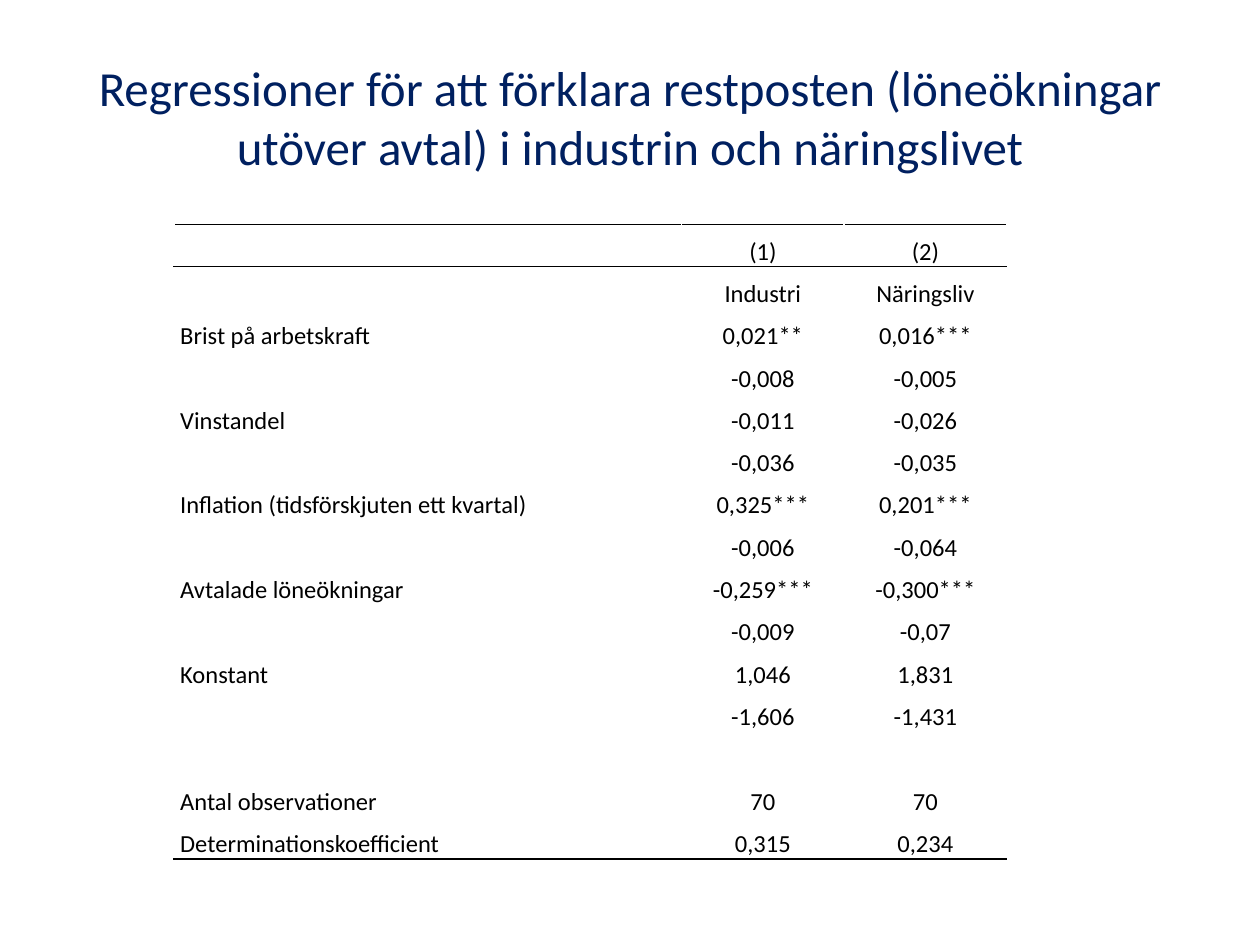
from lxml.etree import SubElement
from pptx import Presentation
from pptx.dml.color import RGBColor
from pptx.enum.text import MSO_ANCHOR as Anchor, PP_ALIGN as Align
from pptx.oxml.ns import qn
from pptx.util import Inches, Pt

TITLE = ("Regressioner för att förklara restposten (löneökningar utöver avtal) "
         "i industrin och näringslivet")
REGRESSIONS = [
    ("", "(1)", "(2)"),
    ("", "Industri", "Näringsliv"),
    ("Brist på arbetskraft", "0,021**", "0,016***"),
    ("", "-0,008", "-0,005"),
    ("Vinstandel", "-0,011", "-0,026"),
    ("", "-0,036", "-0,035"),
    ("Inflation (tidsförskjuten ett kvartal)", "0,325***", "0,201***"),
    ("", "-0,006", "-0,064"),
    ("Avtalade löneökningar", "-0,259***", "-0,300***"),
    ("", "-0,009", "-0,07"),
    ("Konstant", "1,046", "1,831"),
    ("", "-1,606", "-1,431"),
    ("", "", ""),
    ("Antal observationer", "70", "70"),
    ("Determinationskoefficient", "0,315", "0,234"),
]
COLORS = {"title": "002060", "text": "000000", "rule": "000000"}
FONT = "Calibri"
COLUMN_WIDTHS = (4.03, 1.29, 1.29)
TABLE_HEIGHT = 5.04
LAST = len(REGRESSIONS) - 1
RULES = {0: ("a:lnT", "a:lnB"), 1: ("a:lnT",), LAST: ("a:lnB",)}
CELL_FORMAT = {
    "margin_left": Inches(0.05), "margin_right": Inches(0.05),
    "margin_top": 0, "margin_bottom": 0, "vertical_anchor": Anchor.BOTTOM,
}
TITLE_BOX = {"left": Inches(0.5), "top": Inches(0.3),
             "width": Inches(9), "height": Inches(1.25)}
TABLE_FLAGS = {"first_row": False, "horz_banding": False}


def apply(target, values):
    """Set each named attribute on the target."""
    for name, value in values.items():
        setattr(target, name, value)


def write(paragraph, text, size, color, align):
    """Put one formatted run in a paragraph."""
    paragraph.alignment = align
    run = paragraph.add_run()
    run.text = text
    apply(run.font, {"name": FONT, "size": Pt(size)})
    run.font.color.rgb = RGBColor.from_string(COLORS[color])


def draw_rule(cell, edge):
    """Draw a thin line along one edge of a cell."""
    line = SubElement(cell._tc.get_or_add_tcPr(), qn(edge), w=str(Pt(1)))
    fill = SubElement(line, qn("a:solidFill"))
    SubElement(fill, qn("a:srgbClr"), val=COLORS["rule"])


def add_title(slide):
    """Place and format the title."""
    title = slide.shapes.title
    apply(title, TITLE_BOX)
    apply(title.text_frame, {"word_wrap": True, "vertical_anchor": Anchor.MIDDLE})
    write(title.text_frame.paragraphs[0], TITLE, 28, "title", Align.CENTER)


def add_regressions(slide):
    """Build the regression table."""
    table = slide.shapes.add_table(
        len(REGRESSIONS), len(COLUMN_WIDTHS), Inches(1.38), Inches(1.78),
        Inches(sum(COLUMN_WIDTHS)), Inches(TABLE_HEIGHT)).table
    apply(table, TABLE_FLAGS)
    for column, width in zip(table.columns, COLUMN_WIDTHS):
        column.width = Inches(width)
    for r, values in enumerate(REGRESSIONS):
        for c, value in enumerate(values):
            cell = table.cell(r, c)
            apply(cell, CELL_FORMAT)
            for edge in RULES.get(r, ()):
                draw_rule(cell, edge)
            cell.fill.background()
            if value:
                paragraph = cell.text_frame.paragraphs[0]
                paragraph.line_spacing = 1.15
                write(paragraph, value, 14, "text", Align.CENTER if c else Align.LEFT)


def main():
    """Build and save the slide."""
    deck = Presentation()
    apply(deck, {"slide_width": Inches(10), "slide_height": Inches(7.5)})
    slide = deck.slides.add_slide(deck.slide_layouts.get_by_name("Title Only"))
    add_title(slide)
    add_regressions(slide)
    deck.save("out.pptx")


if __name__ == "__main__":
    main()
